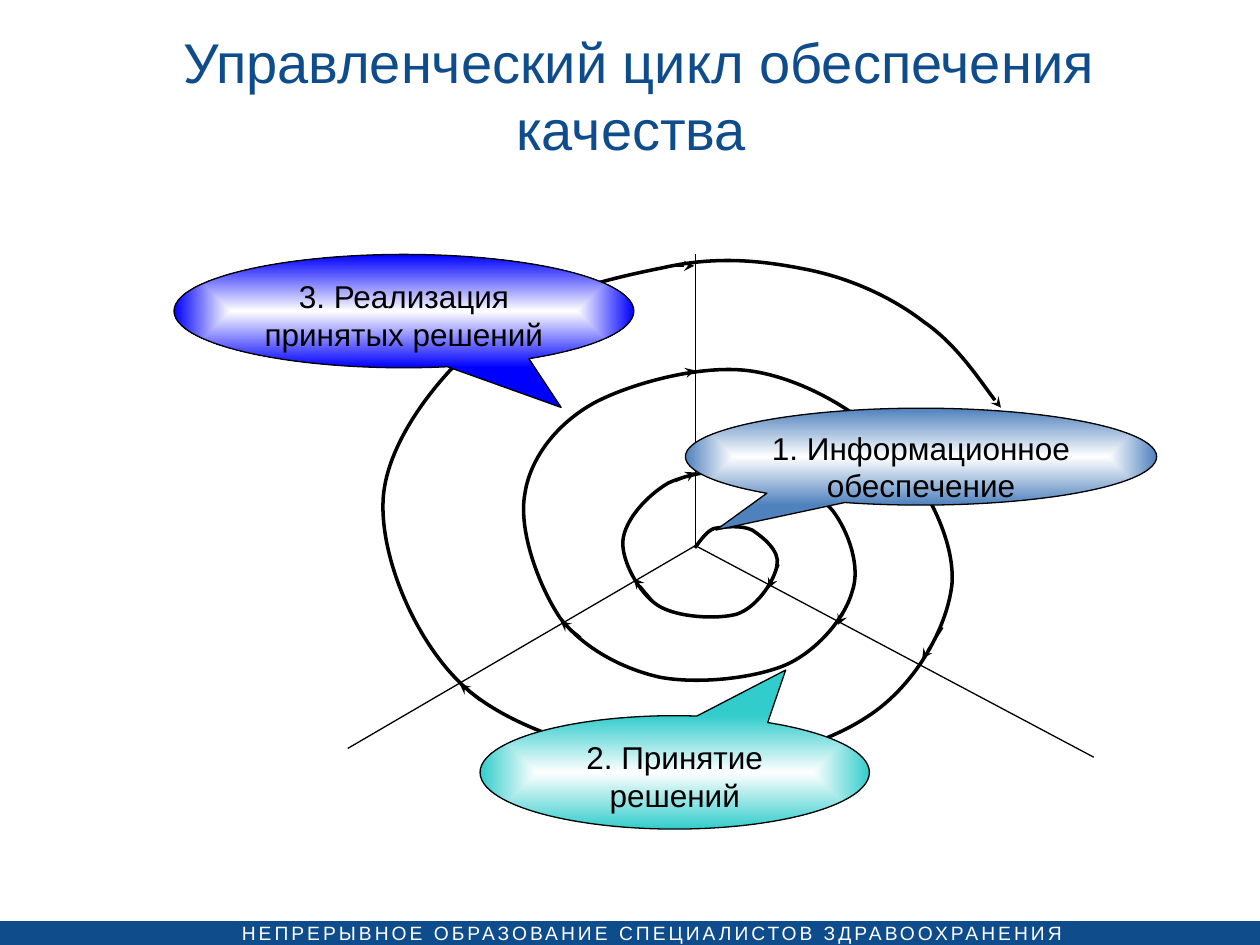
from lxml import etree
from pptx import Presentation
from pptx.dml.color import RGBColor
from pptx.enum.shapes import MSO_CONNECTOR, MSO_SHAPE
from pptx.enum.text import MSO_ANCHOR, MSO_AUTO_SIZE, PP_ALIGN
from pptx.oxml.ns import qn
from pptx.util import Pt

STRAIGHT = MSO_CONNECTOR.STRAIGHT
RECTANGLE, CALLOUT = MSO_SHAPE.RECTANGLE, MSO_SHAPE.OVAL_CALLOUT
LEFT, CENTER = PP_ALIGN.LEFT, PP_ALIGN.CENTER
TOP, MIDDLE = MSO_ANCHOR.TOP, MSO_ANCHOR.MIDDLE
NO_FIT = MSO_AUTO_SIZE.NONE

FONT = "Arial"
NAVY, BLACK, WHITE = "0F4C8B", "000000", "FFFFFF"

HUB = (397.4, 311.8)
AXIS_ENDS = [(397.4, 145.4), (198.7, 427.7), (625, 432.7)]

# Knots of the spiral, from the hub outwards
SPIRAL = [
    (396.7, 313.2), (408.2, 302.4), (429.8, 303.1), (444.2, 323.3),
    (421.2, 350.6), (375.8, 345.6), (355.7, 308.9), (382.3, 276.5),
    (432, 270), (475.9, 292.3), (487.4, 338.4), (448.6, 380.2),
    (376.6, 386.6), (320.4, 352.8), (299.5, 282.2), (339.8, 230.4),
    (429.1, 211.7), (509, 254.9), (543.6, 334.1), (495.4, 410.4),
    (386.6, 436.3), (266.4, 393.1), (218.9, 285.1), (277.9, 191.5),
    (379.4, 152.6), (460.8, 154.1), (528.5, 183.6), (572.4, 233.3),
]

# Direction marks where the spiral crosses an axis
MARKS = [
    ((538.6, 358.6), (527, 376.6)),
    ((485.3, 342.7), (478.8, 357.1)),
    ((445, 322.6), (439.2, 336.2)),
    ((274.3, 400.3), (262.8, 391)),
    ((331.9, 364.3), (320.4, 355)),
    ((373.7, 344.2), (362.2, 330.5)),
    ((384.5, 151.9), (396.7, 151.9)),
    ((379.4, 216), (397.4, 211.7)),
    ((385.9, 275), (397.4, 270)),
]

# Text, frame, pointer tip, edge colour
STAGES = [
    ("1. Информационное обеспечение", (391.7, 233.3, 269.3, 55.4), (-0.435, 0.757), "4F81BD"),
    ("2. Принятие решений", (274.3, 409, 222.5, 64.8), (0.285, -0.903), "33CCCC"),
    ("3. Реализация принятых решений", (99.4, 145.4, 262.8, 64.8), (0.342, 0.85), "0000FF"),
]


def color(value):
    return RGBColor.from_string(value)


def write(frame, text, size=18, ink=BLACK, align=CENTER, anchor=TOP,
          wrap=True, inset=None, spacing=None):
    frame.auto_size = NO_FIT
    frame.word_wrap = wrap
    frame.vertical_anchor = anchor
    if inset is not None:
        frame.margin_left = frame.margin_right = Pt(inset)
        frame.margin_top = frame.margin_bottom = Pt(inset)
    para = frame.paragraphs[0]
    para.alignment = align
    span = para.add_run()
    span.text = text
    span.font.name = FONT
    span.font.size = Pt(size)
    span.font.color.rgb = color(ink)
    if spacing is not None:
        span.font._element.set("spc", str(round(spacing * 100)))


def curve_points(knots):
    """Bezier points of a smooth curve: two controls and an end per segment."""
    padded = [knots[0], *knots, knots[-1]]
    points = []
    for before, start, end, after in zip(padded, padded[1:], padded[2:], padded[3:]):
        points.append(tuple(s + (e - b) / 6 for b, s, e in zip(before, start, end)))
        points.append(tuple(e - (a - s) / 6 for s, e, a in zip(start, end, after)))
        points.append(end)
    return points


class Diagram:
    def __init__(self, page):
        self.page = page
        self.shapes = page.shapes

    def outline(self, item, width, arrow=False):
        item.line.color.rgb = color(BLACK)
        item.line.width = Pt(width)
        if arrow:
            etree.SubElement(item.line._get_or_add_ln(), qn("a:tailEnd"), type="stealth")

    def title(self, text, frame):
        box = self.shapes.title
        box.left, box.top, box.width, box.height = map(Pt, frame)
        write(box.text_frame, text, size=32, ink=NAVY, anchor=MIDDLE)

    def bar(self, frame, fill):
        box = self.shapes.add_shape(RECTANGLE, *map(Pt, frame))
        box.shadow.inherit = False
        box.fill.solid()
        box.fill.fore_color.rgb = color(fill)
        box.line.fill.background()

    def label(self, text, frame, **style):
        box = self.shapes.add_textbox(*map(Pt, frame))
        write(box.text_frame, text, **style)

    def line(self, start, end, width, arrow=False):
        line = self.shapes.add_connector(STRAIGHT, *map(Pt, (*start, *end)))
        self.outline(line, width, arrow)
        etree.SubElement(line._element.spPr, qn("a:effectLst"))

    def curve(self, knots, width):
        builder = self.shapes.build_freeform(*knots[0], scale=Pt(1))
        builder.add_line_segments(curve_points(knots), close=False)
        curve = builder.convert_to_shape()
        curve.shadow.inherit = False
        curve.fill.background()
        self.outline(curve, width, arrow=True)
        # Join every three line points into one Bezier segment
        route = next(curve._element.iter(qn("a:path")))
        steps = route.findall(qn("a:lnTo"))
        for first in range(0, len(steps), 3):
            bend = etree.SubElement(route, qn("a:cubicBezTo"))
            for step in steps[first:first + 3]:
                bend.append(step[0])
                route.remove(step)

    def callout(self, text, frame, tip, edge):
        box = self.shapes.add_shape(CALLOUT, *map(Pt, frame))
        box.shadow.inherit = False
        box.adjustments[0], box.adjustments[1] = tip
        # White centre fading to the edge colour
        box.fill.gradient()
        for stop, position, tint in zip(box.fill.gradient_stops, (0, 1), (WHITE, edge)):
            stop.position = position
            stop.color.rgb = color(tint)
        gradient = box._element.spPr.find(qn("a:gradFill"))
        linear = gradient.find(qn("a:lin"))
        shade = etree.Element(qn("a:path"), path="rect")
        etree.SubElement(shade, qn("a:fillToRect"), dict.fromkeys("ltrb", "50000"))
        gradient.replace(linear, shade)
        self.outline(box, 0.75)
        write(box.text_frame, text)


def main():
    deck = Presentation()
    deck.slide_width, deck.slide_height = Pt(720), Pt(540)
    diagram = Diagram(deck.slides.add_slide(deck.slide_layouts[5]))

    # Footer
    diagram.bar((-2.9, 526.3, 722.9, 15.8), NAVY)
    diagram.label("НЕПРЕРЫВНОЕ ОБРАЗОВАНИЕ СПЕЦИАЛИСТОВ ЗДРАВООХРАНЕНИЯ",
                  (138.2, 526.3, 477.4, 13.7), size=11, ink=WHITE, align=LEFT,
                  wrap=False, inset=0, spacing=1.7)

    # Axes and spiral
    for end in AXIS_ENDS:
        diagram.line(HUB, end, 0.75)
    diagram.curve(SPIRAL, 2)

    # Stages of the cycle
    for stage in STAGES:
        diagram.callout(*stage)
    for start, end in MARKS:
        diagram.line(start, end, 1.25, arrow=True)

    diagram.title(" Управленческий цикл обеспечения качества", (36.7, 0, 648, 108))
    deck.save("out.pptx")


if __name__ == "__main__":
    main()
